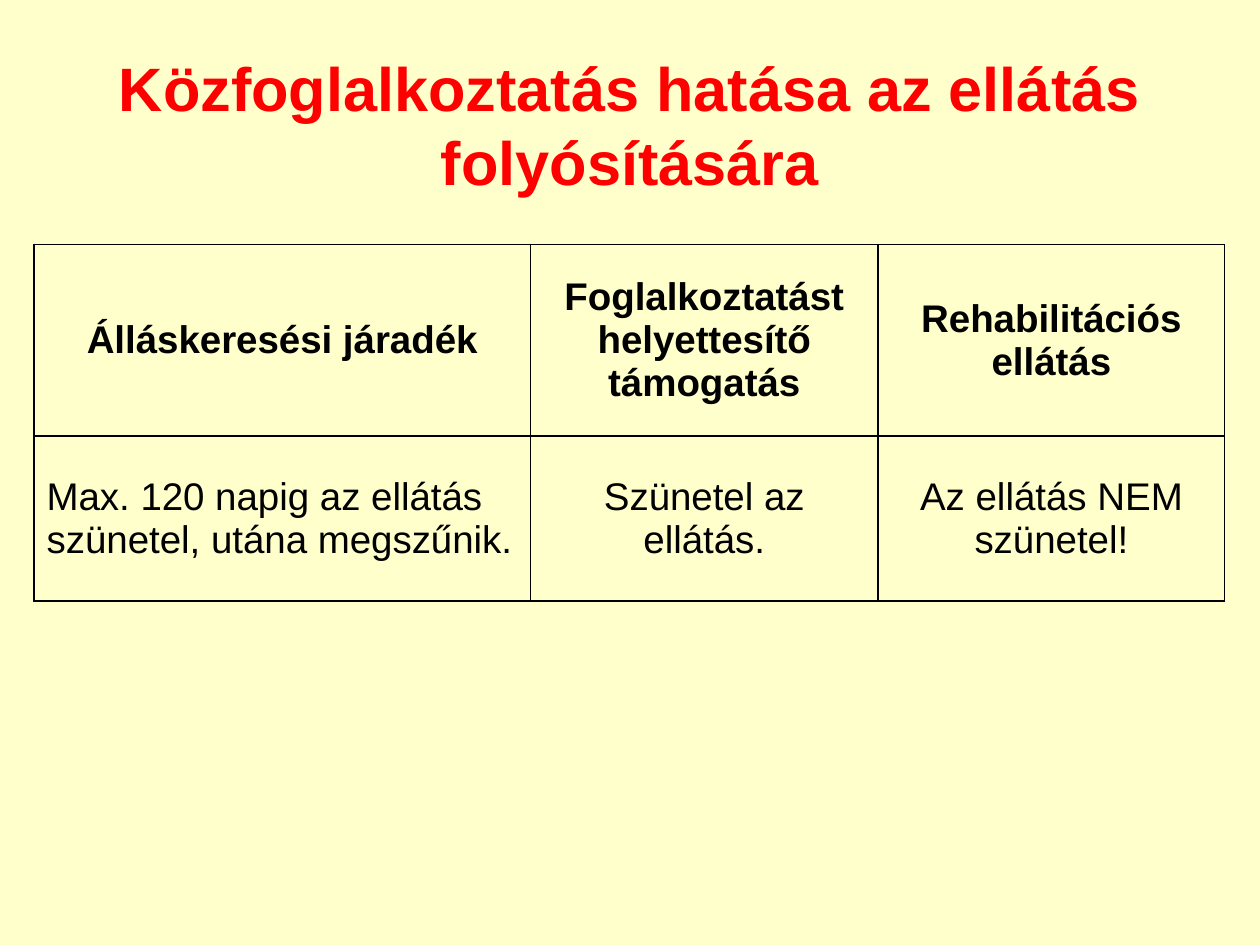
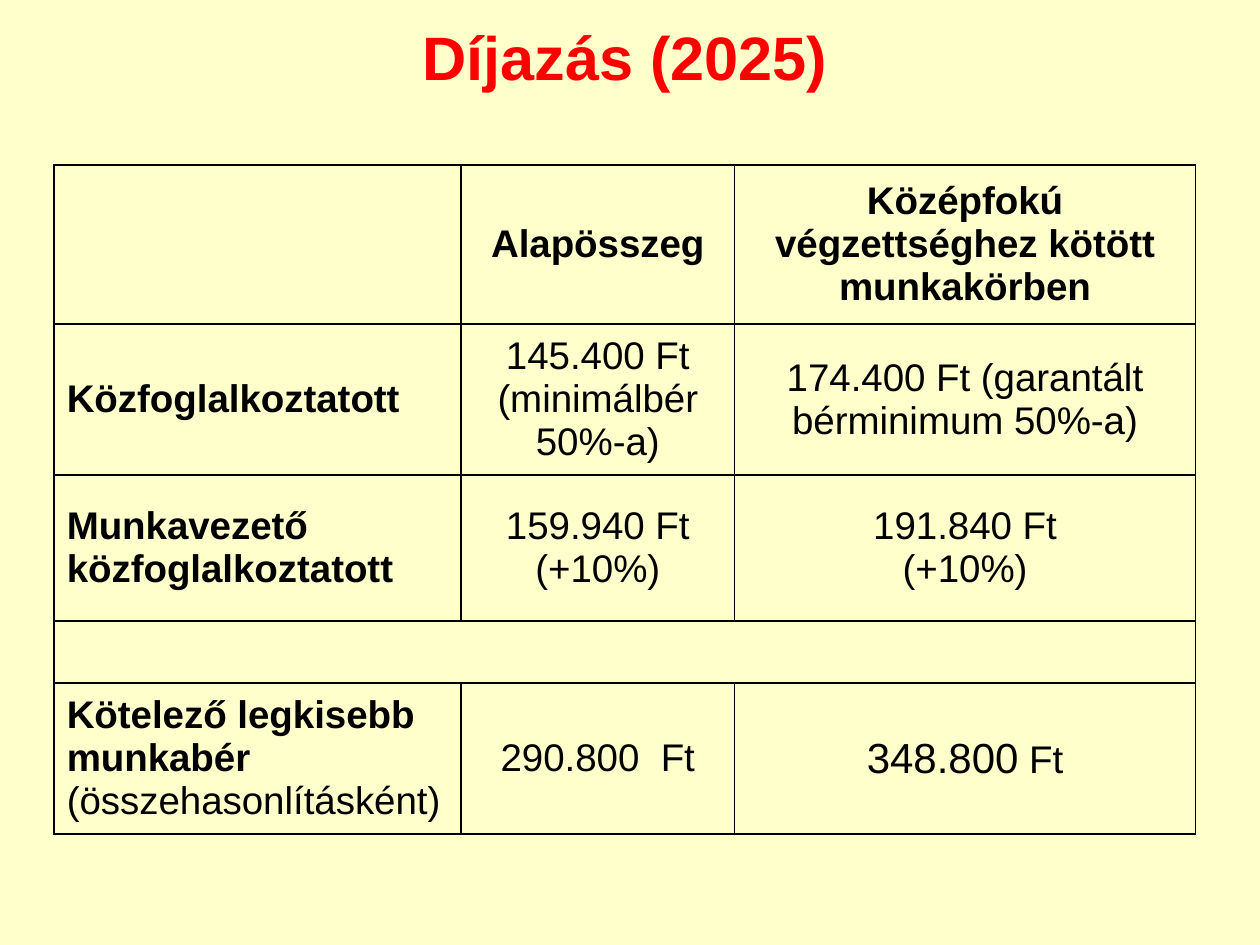
from lxml.etree import SubElement
from pptx import Presentation
from pptx.dml.color import RGBColor
from pptx.enum.text import MSO_ANCHOR as Anchor, PP_ALIGN as Align
from pptx.oxml import parse_xml
from pptx.oxml.ns import nsdecls
from pptx.util import Inches, Pt

FONT = "Arial"
BACKGROUND, TITLE_COLOUR, INK = "FFFFCC", "FF0000", "000000"
TITLE_SIZE, CELL_SIZE, BORDER_WIDTH = 35, 22, Pt(1)


def style_runs(paragraph, size, colour, bold):
    for span in paragraph.runs:
        span.font.name = FONT
        span.font.size = Pt(size)
        span.font.bold = bold
        span.font.color.rgb = RGBColor.from_string(colour)


def add_borders(cell):
    properties = cell._tc.get_or_add_tcPr()
    for place, side in enumerate(("lnL", "lnR", "lnT", "lnB")):
        properties.insert(place, parse_xml(
            f'<a:{side} {nsdecls("a")} w="{BORDER_WIDTH}"><a:solidFill>'
            f'<a:srgbClr val="{INK}"/></a:solidFill></a:{side}>'))


# Content: each line of a cell is one paragraph
pages = [
    {
        "title": "Közfoglalkoztatás hatása az ellátás folyósítására",
        "title_at": (0, 0.35, 10, 1.28),
        "table_at": (0.27, 1.94),
        "columns": (3.94, 2.76, 2.75),
        "heights": (1.52, 1.31),
        "bold_labels": False,
        "rows": [
            ("Álláskeresési járadék", "Foglalkoztatást helyettesítő támogatás",
             "Rehabilitációs ellátás"),
            ("Max. 120 napig az ellátás szünetel, utána megszűnik.",
             "Szünetel az ellátás.", "Az ellátás NEM szünetel!"),
        ],
    },
    {
        "title": "Díjazás (2025)",
        "title_at": (-0.04, 0.1, 10, 0.69),
        "table_at": (0.43, 1.31),
        "columns": (3.23, 2.17, 3.66),
        "heights": (1.26, 1.2, 1.16, 0.49, 1.2),
        "bold_labels": True,
        "rows": [
            ("", "Alapösszeg", "Középfokú végzettséghez kötött munkakörben"),
            ("Közfoglalkoztatott", "145.400 Ft\n(minimálbér 50%-a)",
             "174.400 Ft (garantált bérminimum 50%-a)"),
            ("Munkavezető közfoglalkoztatott", "159.940 Ft\n(+10%)",
             "191.840 Ft\n(+10%)"),
            ("", "", ""),
            ("Kötelező legkisebb munkabér\n(összehasonlításként)",
             "290.800  Ft", "348.800"),
        ],
    },
]

deck = Presentation()
deck.slide_width, deck.slide_height = Inches(10), Inches(7.5)

for content in pages:
    page = deck.slides.add_slide(deck.slide_layouts[6])
    page.background.fill.solid()
    page.background.fill.fore_color.rgb = RGBColor.from_string(BACKGROUND)

    # Title
    box = page.shapes.add_textbox(*map(Inches, content["title_at"]))
    box.text_frame.word_wrap = True
    box.text_frame.text = content["title"]
    heading = box.text_frame.paragraphs[0]
    heading.alignment = Align.CENTER
    style_runs(heading, TITLE_SIZE, TITLE_COLOUR, True)

    # Table grid
    columns, heights = content["columns"], content["heights"]
    left, top = content["table_at"]
    table = page.shapes.add_table(
        len(heights), len(columns), Inches(left), Inches(top),
        Inches(sum(columns)), Inches(sum(heights))).table
    table.first_row = table.horz_banding = False
    for column, width in zip(table.columns, columns):
        column.width = Inches(width)
    for row, height in zip(table.rows, heights):
        row.height = Inches(height)

    # Table cells
    for r, texts in enumerate(content["rows"]):
        for c, text in enumerate(texts):
            cell = table.cell(r, c)
            cell.fill.background()
            add_borders(cell)
            cell.vertical_anchor = Anchor.MIDDLE
            cell.text_frame.text = text
            is_label = c == 0 and r > 0
            for paragraph in cell.text_frame.paragraphs:
                paragraph.alignment = Align.LEFT if is_label else Align.CENTER
                remark = paragraph.text.startswith("(")
                bold = r == 0 or (is_label and content["bold_labels"] and not remark)
                style_runs(paragraph, CELL_SIZE, INK, bold)
        if not any(texts):
            table.cell(r, 0).merge(table.cell(r, len(columns) - 1))

# The last amount is larger than its currency
amount = table.cell(4, 2).text_frame.paragraphs[0]
amount.add_run().text = " Ft"
style_runs(amount, CELL_SIZE, INK, False)
amount.runs[0].font.size = Pt(24)

deck.save("out.pptx")
